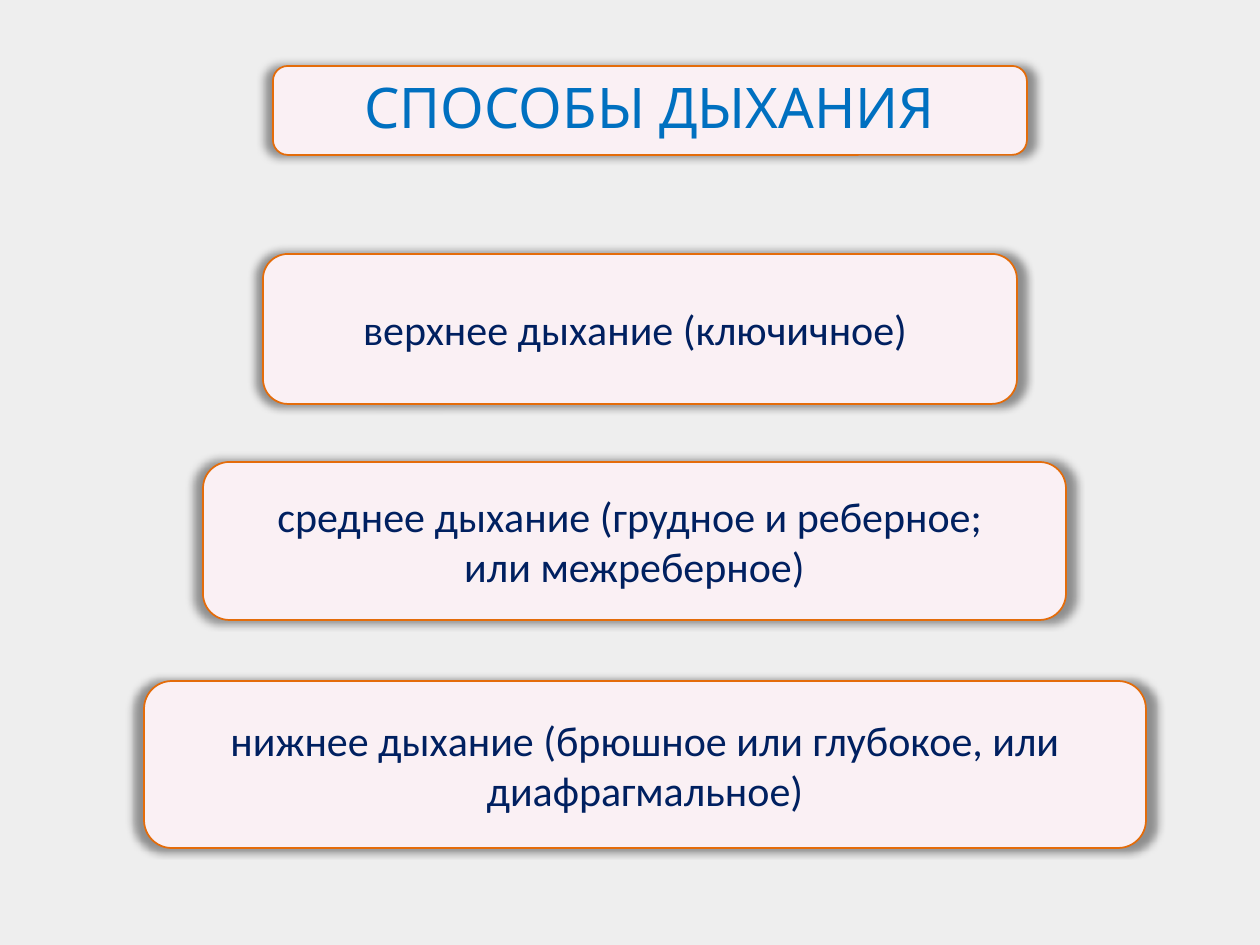
from lxml import etree
from pptx import Presentation
from pptx.dml.color import RGBColor
from pptx.enum.shapes import MSO_SHAPE as Shape
from pptx.enum.text import MSO_ANCHOR as Anchor, PP_ALIGN as Align
from pptx.oxml.ns import qn
from pptx.util import Emu, Pt

PX_PER_INCH = 126


def px(length):
    return Emu(round(length * 914400 / PX_PER_INCH))


def color(value):
    return RGBColor.from_string(value)


class BreathingSlide:
    background = "EEEEEE"
    panel_fill = "FAF0F4"
    panel_line = "E46C0A"
    title_format = {"name": "League Spartan", "size": Pt(32), "color": "0070C0"}
    body_format = {"name": "Calibri", "size": Pt(24), "color": "002060"}

    def __init__(self, presentation):
        self.slide = presentation.slides.add_slide(presentation.slide_layouts[6])
        fill = self.slide.background.fill
        fill.solid()
        fill.fore_color.rgb = color(self.background)

    def set_text(self, shape, lines, text_format, anchor):
        frame = shape.text_frame
        frame.word_wrap = True
        frame.vertical_anchor = anchor
        frame.text = "\n".join(lines)
        for paragraph in frame.paragraphs:
            paragraph.alignment = Align.CENTER
            for run in paragraph.runs:
                for key, value in text_format.items():
                    if key == "color":
                        run.font.color.rgb = color(value)
                    else:
                        setattr(run.font, key, value)

    def glow_shadow(self, shape):
        shape.shadow.inherit = False
        effects = shape._element.spPr.find(qn("a:effectLst"))
        shadow = etree.SubElement(
            effects, qn("a:outerShdw"), blurRad=str(Pt(5)), dist="0",
            sx="102000", sy="102000", algn="ctr", rotWithShape="0")
        black = etree.SubElement(shadow, qn("a:srgbClr"), val="000000")
        etree.SubElement(black, qn("a:alpha"), val="40000")

    def panel(self, left, top, width, height, lines=()):
        shape = self.slide.shapes.add_shape(
            Shape.ROUNDED_RECTANGLE, px(left), px(top), px(width), px(height))
        shape.fill.solid()
        shape.fill.fore_color.rgb = color(self.panel_fill)
        shape.line.color.rgb = color(self.panel_line)
        shape.line.width = Pt(1)
        self.glow_shadow(shape)
        if lines:
            self.set_text(shape, lines, self.body_format, Anchor.MIDDLE)

    def title(self, left, top, width, height, text):
        box = self.slide.shapes.add_textbox(
            px(left), px(top), px(width), px(height))
        self.set_text(box, [text], self.title_format, Anchor.BOTTOM)


def main():
    presentation = Presentation()
    presentation.slide_width, presentation.slide_height = px(1260), px(945)
    slide = BreathingSlide(presentation)

    # Heading on its own panel
    slide.panel(273, 66, 754, 89)
    slide.title(273, 37, 754, 109, "СПОСОБЫ ДЫХАНИЯ")

    # Ways of breathing, from upper to lower
    slide.panel(263, 254, 754, 150, ["верхнее дыхание (ключичное) "])
    slide.panel(203, 462, 863, 158, ["среднее дыхание (грудное и реберное; ",
                                     "или межреберное)"])
    slide.panel(144, 681, 1002, 167,
                ["нижнее дыхание (брюшное или глубокое, или диафрагмальное)"])

    presentation.save("out.pptx")


if __name__ == "__main__":
    main()
